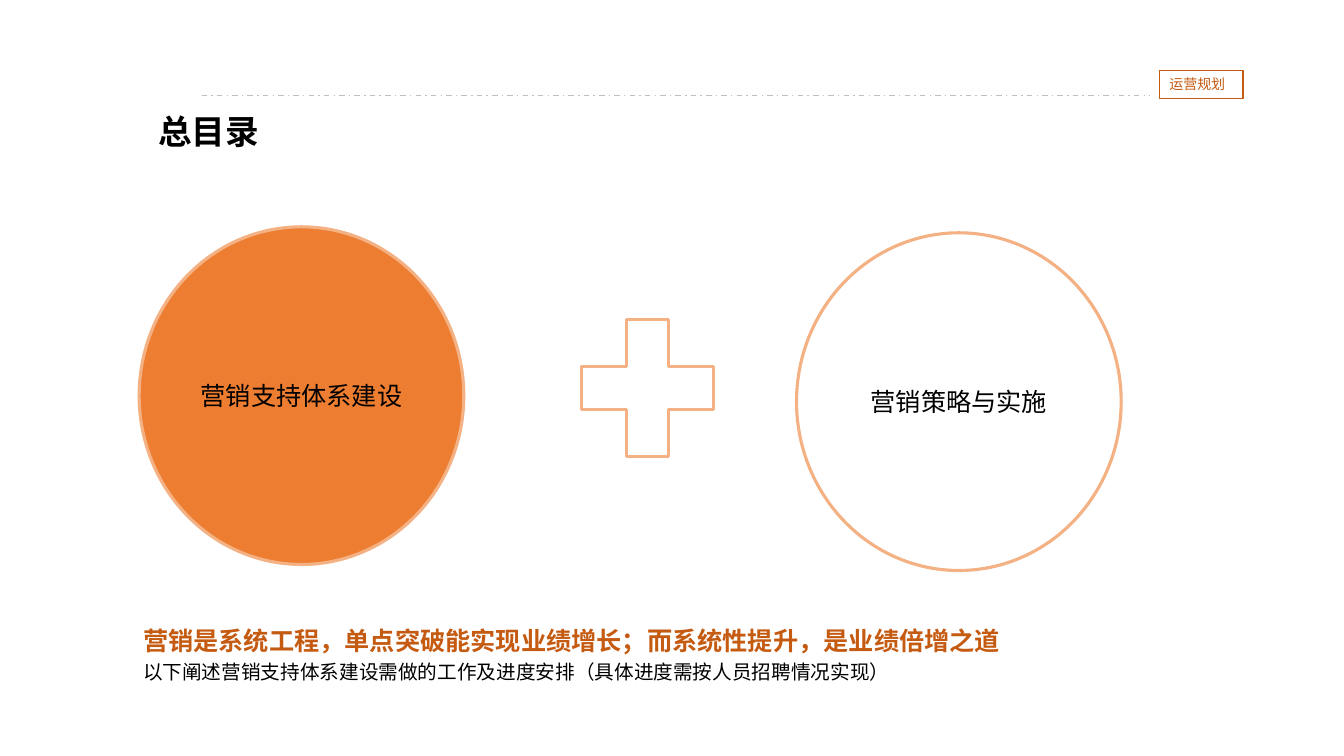
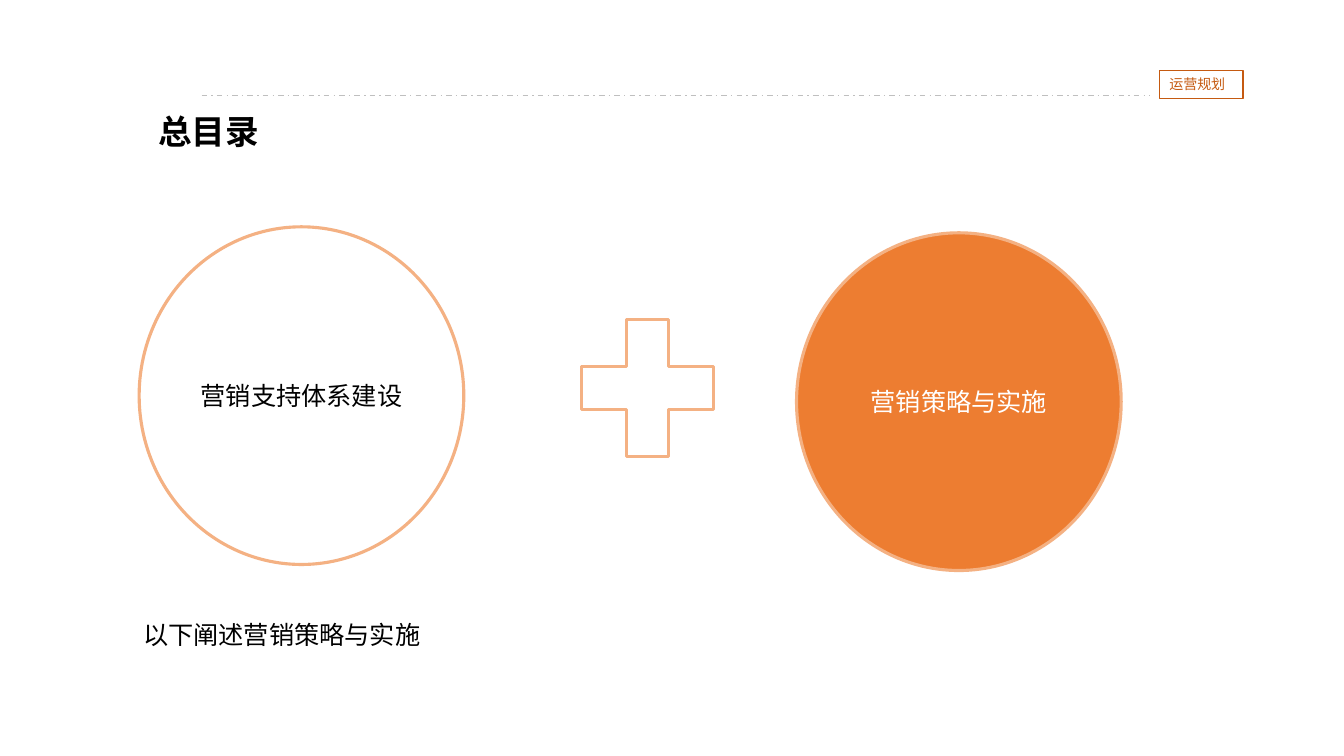
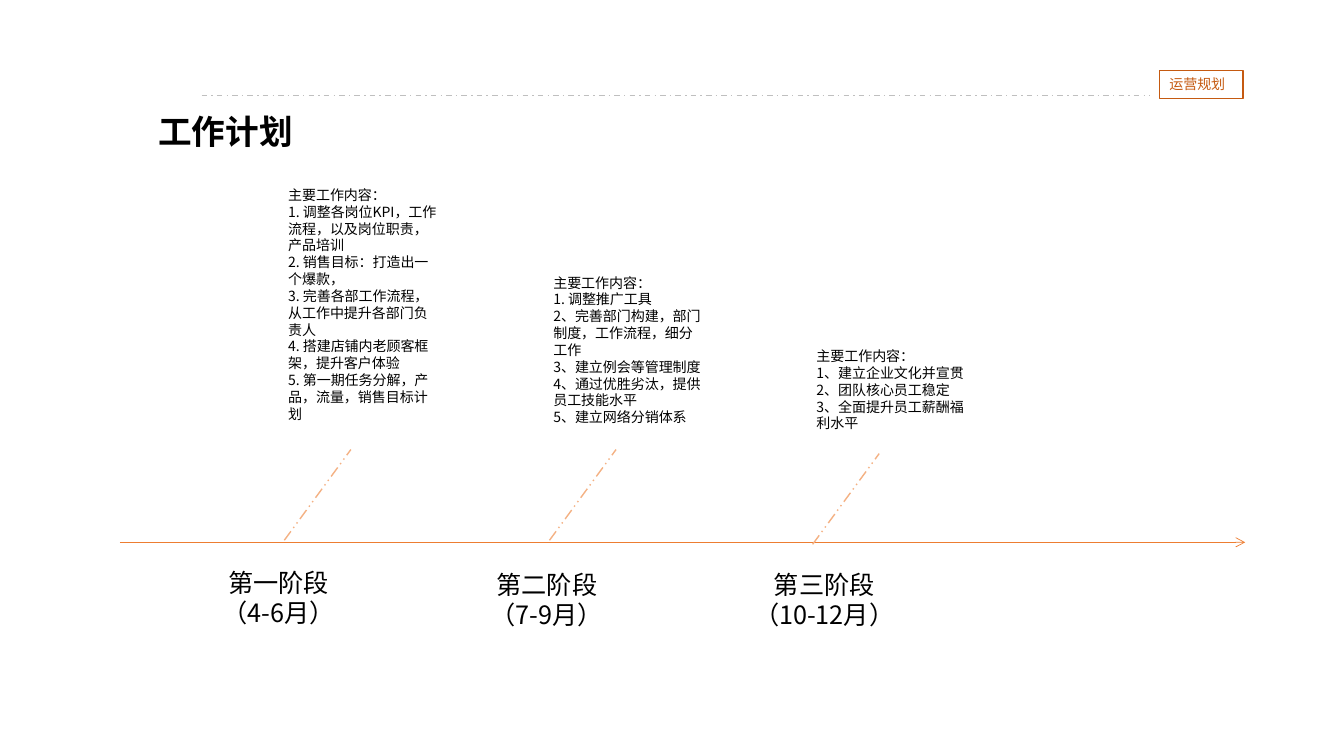
from dataclasses import dataclass

import pptx
import pptx.dml.color
import pptx.enum.dml
import pptx.enum.shapes
import pptx.enum.text
import pptx.oxml.ns
import pptx.util
from lxml import etree

SHAPES = pptx.enum.shapes.MSO_SHAPE
DASHES = pptx.enum.dml.MSO_LINE
ALIGN = pptx.enum.text.PP_ALIGN
ANCHOR = pptx.enum.text.MSO_ANCHOR
qn = pptx.oxml.ns.qn


@dataclass(frozen=True)
class Theme:
    font: str = "Noto Sans CJK SC"
    latin: str = "Calibri"
    ink: str = "000000"
    white: str = "FFFFFF"
    orange: str = "ED7D31"
    peach: str = "F4B183"
    rust: str = "C55A11"
    rule: str = "BFBFBF"
    title: int = 24
    label: int = 18
    body: int = 14
    small: int = 10
    outline: float = 2.25
    thin: float = 1
    hairline: float = 0.5


THEME = Theme()
EMU_PER_PX = 9144  # 100 px to the inch

CIRCLES = [("营销支持体系建设", 138, 225), ("营销策略与实施", 790, 231)]

# Each stage: label, label left and top, foot of its leader, top and height of its notes, notes
STAGES = [
    ("第一阶段（4-6月）", (193, 558), (282, 536), (180, 245), [
        "1. 调整各岗位KPI，工作流程，以及岗位职责，产品培训",
        "2. 销售目标：打造出一个爆款，",
        "3. 完善各部工作流程，从工作中提升各部门负责人",
        "4. 搭建店铺内老顾客框架，提升客户体验",
        "5. 第一期任务分解，产品，流量，销售目标计划",
    ]),
    ("第二阶段（7-9月）", (459, 560), (545, 536), (267, 161), [
        "1. 调整推广工具",
        "2、完善部门构建，部门制度，工作流程，细分工作",
        "3、建立例会等管理制度",
        "4、通过优胜劣汰，提供员工技能水平",
        "5、建立网络分销体系",
    ]),
    ("第三阶段（10-12月）", (734, 560), (806, 540), (340, 111), [
        "1、建立企业文化并宣贯",
        "2、团队核心员工稳定",
        "3、全面提升员工薪酬福利水平",
    ]),
]


def px(*lengths):
    return [pptx.util.Emu(length * EMU_PER_PX) for length in lengths]


def rgb(value):
    return pptx.dml.color.RGBColor.from_string(value)


def style_paragraph(paragraph, size, color=THEME.ink, bold=False,
                    align=ALIGN.LEFT, font=THEME.font, spacing=None):
    paragraph.alignment = align
    paragraph.line_spacing = spacing
    paragraph.font.size = pptx.util.Pt(size)
    paragraph.font.bold = bold
    paragraph.font.color.rgb = rgb(color)
    paragraph.font.name = font
    # East Asian characters need their own typeface entry
    latin = paragraph.font._element.find(qn("a:latin"))
    east_asian = etree.Element(qn("a:ea"), typeface=THEME.font)
    latin.addnext(east_asian)


def write(frame, lines, anchor=ANCHOR.TOP, grow=True):
    """Fill a text frame from (text, style) pairs, one paragraph each."""
    frame.word_wrap = True
    frame.vertical_anchor = anchor
    sizing = pptx.enum.text.MSO_AUTO_SIZE
    frame.auto_size = sizing.SHAPE_TO_FIT_TEXT if grow else sizing.NONE
    for index, (text, style) in enumerate(lines):
        paragraph = frame.paragraphs[0] if index == 0 else frame.add_paragraph()
        paragraph.text = text
        style_paragraph(paragraph, **style)


def add_text(slide, box, lines):
    write(slide.shapes.add_textbox(*px(*box)).text_frame, lines)


def add_outlined(slide, kind, box, line, width, fill=None):
    shape = slide.shapes.add_shape(kind, *px(*box))
    shape.shadow.inherit = False
    shape.line.color.rgb = rgb(line)
    shape.line.width = pptx.util.Pt(width)
    if fill:
        shape.fill.solid()
        shape.fill.fore_color.rgb = rgb(fill)
    else:
        shape.fill.background()
    return shape


def add_line(slide, start, end, color, width, dash=None, arrow=False):
    straight = pptx.enum.shapes.MSO_CONNECTOR.STRAIGHT
    connector = slide.shapes.add_connector(straight, *px(*start, *end))
    connector.line.color.rgb = rgb(color)
    connector.line.width = pptx.util.Pt(width)
    if dash:
        connector.line.dash_style = dash
    if arrow:
        etree.SubElement(connector.line._get_or_add_ln(), qn("a:tailEnd"), type="arrow")
    etree.SubElement(connector._element.spPr, qn("a:effectLst"))


def add_page(deck, heading):
    """Slide with the shared title, rule and section badge."""
    slide = deck.slides.add_slide(deck.slide_layouts[5])
    title = slide.shapes.title
    title.left, title.top, title.width, title.height = px(147, 105, 357, 53)
    write(title.text_frame, [(heading, dict(size=THEME.title, bold=True))])

    add_line(slide, (200, 95), (1140, 95), THEME.rule, THEME.thin, DASHES.DASH_DOT)
    badge = add_outlined(slide, SHAPES.RECTANGLE, (1150, 70, 83, 28), THEME.rust, THEME.thin)
    write(badge.text_frame, [("运营规划", dict(size=THEME.small, color=THEME.rust))])
    return slide


def build_contents(deck, fills, inks, caption, caption_height):
    """Two circles joined by a plus, with a caption below."""
    slide = add_page(deck, "总目录")
    add_outlined(slide, SHAPES.MATH_PLUS, (553, 293, 178, 184), THEME.peach, THEME.outline)
    for (topic, left, top), fill, ink in zip(CIRCLES, fills, inks):
        circle = add_outlined(slide, SHAPES.OVAL, (left, top, 322, 335),
                              THEME.peach, THEME.outline, fill)
        style = dict(size=THEME.label, color=ink, align=ALIGN.CENTER)
        write(circle.text_frame, [(topic, style)], ANCHOR.MIDDLE, grow=False)
    add_text(slide, (132, 609, 1058, caption_height), caption)


def build_plan(deck):
    """Timeline of stages, each with a leader up to its notes."""
    slide = add_page(deck, "工作计划")
    add_line(slide, (119, 538), (1235, 538), THEME.orange, THEME.hairline, arrow=True)
    for label, corner, (foot_x, foot_y), (notes_top, notes_height), notes in STAGES:
        add_line(slide, (foot_x, foot_y), (foot_x + 66, foot_y - 90),
                 THEME.peach, THEME.thin, DASHES.DASH_DOT_DOT)
        add_text(slide, (foot_x - 6, notes_top, 167, notes_height),
                 [(note, dict(size=THEME.small)) for note in ["主要工作内容：", *notes]])
        add_text(slide, (*corner, 167, 72),
                 [(label, dict(size=THEME.label, align=ALIGN.CENTER))])


def main():
    deck = pptx.Presentation()
    deck.slide_width, deck.slide_height = px(1333, 750)

    build_contents(
        deck, (THEME.orange, None), (THEME.ink, THEME.ink),
        [("营销是系统工程，单点突破能实现业绩增长；而系统性提升，是业绩倍增之道",
          dict(size=THEME.label, color=THEME.rust, bold=True, spacing=1.2)),
         ("以下阐述营销支持体系建设需做的工作及进度安排（具体进度需按人员招聘情况实现）",
          dict(size=THEME.body, spacing=1.2))], 74)
    build_contents(
        deck, (THEME.white, THEME.orange), (THEME.ink, THEME.white),
        [("以下阐述营销策略与实施", dict(size=THEME.label, font=THEME.latin))], 40)
    build_plan(deck)

    deck.save("out.pptx")


if __name__ == "__main__":
    main()
